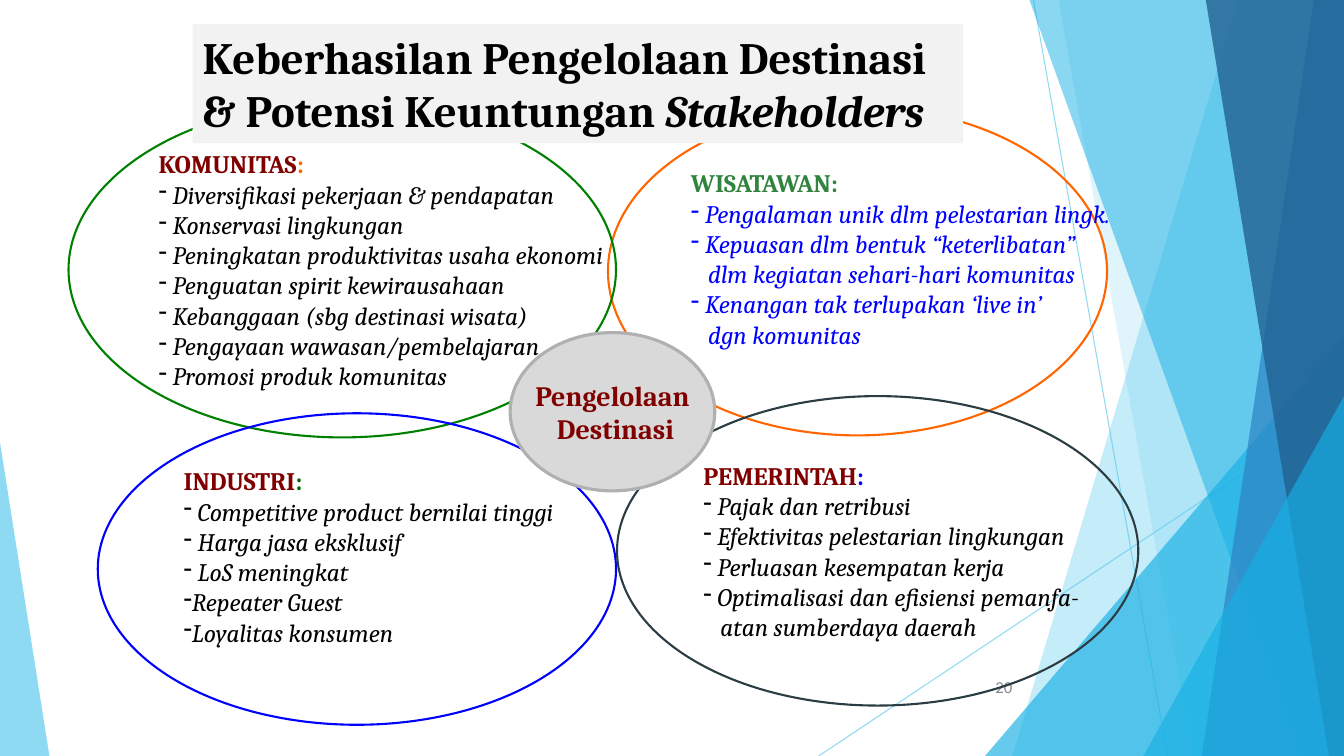
from lxml import etree
from pptx import Presentation
from pptx.dml.color import RGBColor
from pptx.enum.shapes import MSO_CONNECTOR, MSO_SHAPE
from pptx.enum.text import MSO_ANCHOR, MSO_AUTO_SIZE, PP_ALIGN
from pptx.oxml.ns import qn
from pptx.util import Inches, Pt

OVAL, TRIANGLE = MSO_SHAPE.OVAL, MSO_SHAPE.ISOSCELES_TRIANGLE
STRAIGHT = MSO_CONNECTOR.STRAIGHT
MIDDLE, TOP = MSO_ANCHOR.MIDDLE, MSO_ANCHOR.TOP
LEFT, CENTER, RIGHT = PP_ALIGN.LEFT, PP_ALIGN.CENTER, PP_ALIGN.RIGHT
NO_AUTOFIT = MSO_AUTO_SIZE.NONE

BLACK = RGBColor(0x00, 0x00, 0x00)
MAROON = RGBColor(0x80, 0x00, 0x00)
ORANGE = RGBColor(0xFF, 0x66, 0x00)
GREEN = RGBColor(0x00, 0x80, 0x00)
DARK_GREEN = RGBColor(0x00, 0x66, 0x00)
LEAF = RGBColor(0x31, 0x84, 0x3D)
BLUE = RGBColor(0x00, 0x00, 0xFF)
SLATE = RGBColor(0x2C, 0x3C, 0x43)
PALE_GRAY = RGBColor(0xF2, 0xF2, 0xF2)
LIGHT_GRAY = RGBColor(0xD9, 0xD9, 0xD9)
MID_GRAY = RGBColor(0xB0, 0xB0, 0xB0)
NUMBER_GRAY = RGBColor(0x89, 0x89, 0x89)
SKY = RGBColor(0x5F, 0xCB, 0xEF)
CYAN = RGBColor(0x17, 0xB0, 0xE4)
AZURE = RGBColor(0x2E, 0x83, 0xC3)
NAVY = RGBColor(0x22, 0x62, 0x92)

SERIF = "Cambria"
WIDTH, HEIGHT = 13.33, 7.5

# Facets in stacking order: top-left x, bottom-left x, colour, opacity
BANDS_BACK = [(12.28, 10.04, SKY, 36), (10.5, 11.83, SKY, 20)]
BANDS_FRONT = [(10.21, 12.91, CYAN, 50), (13.03, 11.92, AZURE, 70),
               (11.96, 13.18, NAVY, 80)]

# Stakeholders: a leading "-" marks a bullet, "- " one with a gap;
# other lines continue the bullet above
WISATAWAN = dict(
    box=(6.03, 1.06, 4.95, 3.26), outline=ORANGE, heading="WISATAWAN:",
    heading_colors=(LEAF, LEAF), body_color=BLUE, lift=0.3,
    lines=["- Pengalaman unik dlm pelestarian lingk.",
           "- Kepuasan dlm bentuk “keterlibatan”",
           "dlm kegiatan sehari-hari komunitas",
           "- Kenangan tak terlupakan ‘live in’",
           "dgn komunitas"])
KOMUNITAS = dict(
    box=(0.68, 1.01, 5.43, 3.33), outline=GREEN, heading="KOMUNITAS:",
    heading_colors=(MAROON, ORANGE),
    lines=["- Diversifikasi pekerjaan & pendapatan",
           "- Konservasi lingkungan",
           "- Peningkatan produktivitas usaha ekonomi",
           "- Penguatan spirit kewirausahaan",
           "- Kebanggaan (sbg destinasi wisata)",
           "- Pengayaan wawasan/pembelajaran",
           "- Promosi produk komunitas"])
INDUSTRI = dict(
    box=(0.97, 4.1, 5.14, 3.09), outline=BLUE, heading="INDUSTRI:",
    heading_colors=(MAROON, DARK_GREEN), lift=0.3,
    lines=["- Competitive product bernilai tinggi",
           "- Harga jasa eksklusif",
           "- LoS meningkat",
           "-Repeater Guest",
           "-Loyalitas konsumen"])
PEMERINTAH = dict(
    box=(6.12, 3.93, 5.17, 3.07), outline=SLATE, heading="PEMERINTAH:",
    heading_colors=(MAROON, BLUE),
    lines=["- Pajak dan retribusi",
           "- Efektivitas pelestarian lingkungan",
           "- Perluasan kesempatan kerja",
           "- Optimalisasi dan efisiensi pemanfa-",
           "atan sumberdaya daerah"])


def set_opacity(element, percent):
    color = next(element.iter(qn("a:srgbClr")))
    etree.SubElement(color, qn("a:alpha")).set("val", str(percent * 1000))


def fill_facet(facet, color, opacity):
    facet.shadow.inherit = False
    facet.fill.solid()
    facet.fill.fore_color.rgb = color
    facet.line.fill.background()
    set_opacity(facet.element.spPr, opacity)


def add_band(slide, top_x, bottom_x, color, opacity):
    outline = slide.shapes.build_freeform(
        Inches(top_x), Inches(0), scale=1.0)
    corners = [(WIDTH, 0), (WIDTH, HEIGHT), (bottom_x, HEIGHT)]
    outline.add_line_segments([(Inches(x), Inches(y)) for x, y in corners])
    fill_facet(outline.convert_to_shape(), color, opacity)


def add_triangle(slide, box, apex, color, opacity):
    triangle = slide.shapes.add_shape(TRIANGLE, *map(Inches, box))
    triangle.adjustments[0] = apex
    fill_facet(triangle, color, opacity)


def add_ray(slide, *ends):
    ray = slide.shapes.add_connector(STRAIGHT, *map(Inches, ends))
    ray.line.color.rgb = SKY
    ray.line.width = Pt(0.75)
    set_opacity(ray.line._get_or_add_ln(), 70)
    etree.SubElement(ray._element.spPr, qn("a:effectLst"))


def add_backdrop(slide):
    add_ray(slide, 10.25, 0, 11.58, HEIGHT)
    add_ray(slide, WIDTH, 4.03, 8.12, HEIGHT)
    for band in BANDS_BACK:
        add_band(slide, *band)
    add_triangle(slide, (9.77, 3.33, 3.56, 4.17), 1, CYAN, 66)
    for band in BANDS_FRONT:
        add_band(slide, *band)
    add_triangle(slide, (11.34, 3.93, 1.99, 3.57), 1, CYAN, 66)
    add_triangle(slide, (0, 4.39, 0.49, 3.11), 0, SKY, 70)


def add_run(paragraph, text, color, **font):
    run = paragraph.add_run()
    run.text = text
    run.font.color.rgb = color
    for name, value in {"name": SERIF, "size": Pt(18), **font}.items():
        setattr(run.font, name, value)


def set_indent(paragraph, margin, bullet=None):
    props = paragraph._p.get_or_add_pPr()
    props.set("marL", str(Inches(margin)))
    props.set("indent", str(-Inches(margin) if bullet else 0))
    if bullet:
        etree.SubElement(props, qn("a:buChar")).set("char", bullet)


def add_ellipse(slide, box, outline, weight):
    ellipse = slide.shapes.add_shape(OVAL, *map(Inches, box))
    ellipse.shadow.inherit = False
    ellipse.fill.background()
    ellipse.line.color.rgb = outline
    ellipse.line.width = Pt(weight)
    ellipse.text_frame.word_wrap = False
    ellipse.text_frame.vertical_anchor = MIDDLE
    return ellipse


def add_stakeholder(slide, box, outline, heading, heading_colors, lines,
                    body_color=BLACK, lift=0.05):
    frame = add_ellipse(slide, box, outline, 1.5).text_frame
    frame.margin_bottom = Inches(lift)
    title_line = frame.paragraphs[0]
    title_line.alignment = LEFT
    for text, color in zip((heading[:-1], heading[-1]), heading_colors):
        add_run(title_line, text, color, bold=True)
    for line in lines:
        paragraph = frame.add_paragraph()
        paragraph.alignment = LEFT
        if line.startswith("-"):
            set_indent(paragraph, 0.14 if line[1] == " " else 0.08, "-")
        else:
            set_indent(paragraph, 0.17)
        add_run(paragraph, line.lstrip("- "), body_color, italic=True)


def add_title(slide):
    title = slide.shapes.title
    title.left, title.top, title.width, title.height = map(
        Inches, (1.91, 0.24, 7.64, 1.18))
    title.fill.solid()
    title.fill.fore_color.rgb = PALE_GRAY
    frame = title.text_frame
    frame.word_wrap, frame.auto_size = True, NO_AUTOFIT
    frame.vertical_anchor = TOP
    heading = frame.paragraphs[0]
    heading.alignment = LEFT
    style = {"size": Pt(32), "bold": True}
    add_run(heading, "Keberhasilan Pengelolaan Destinasi & Potensi Keuntungan ",
            BLACK, **style)
    add_run(heading, "Stakeholders", BLACK, italic=True, **style)
    # Bring the title in front of the upper ellipses
    slide.shapes.element.append(title.element)


def add_hub(slide):
    hub = add_ellipse(slide, (5.06, 3.3, 2.03, 1.57), MID_GRAY, 2.25)
    hub.fill.solid()
    hub.fill.fore_color.rgb = LIGHT_GRAY
    frame = hub.text_frame
    for paragraph, text in ((frame.paragraphs[0], "Pengelolaan"),
                            (frame.add_paragraph(), " Destinasi")):
        paragraph.alignment = CENTER
        add_run(paragraph, text, MAROON, size=Pt(20), bold=True)


def add_page_number(slide):
    box = slide.shapes.add_textbox(*map(Inches, (9.39, 6.61, 0.75, 0.4)))
    box.text_frame.word_wrap = True
    box.text_frame.vertical_anchor = MIDDLE
    number = box.text_frame.paragraphs[0]
    number.alignment = RIGHT
    add_run(number, "20", NUMBER_GRAY, name="Calibri", size=Pt(12))


def main():
    deck = Presentation()
    deck.slide_width, deck.slide_height = Inches(WIDTH), Inches(HEIGHT)
    slide = deck.slides.add_slide(deck.slide_layouts[5])
    add_backdrop(slide)
    add_stakeholder(slide, **WISATAWAN)
    add_page_number(slide)
    add_stakeholder(slide, **KOMUNITAS)
    add_title(slide)
    add_stakeholder(slide, **INDUSTRI)
    add_stakeholder(slide, **PEMERINTAH)
    add_hub(slide)
    deck.save("out.pptx")


if __name__ == "__main__":
    main()
